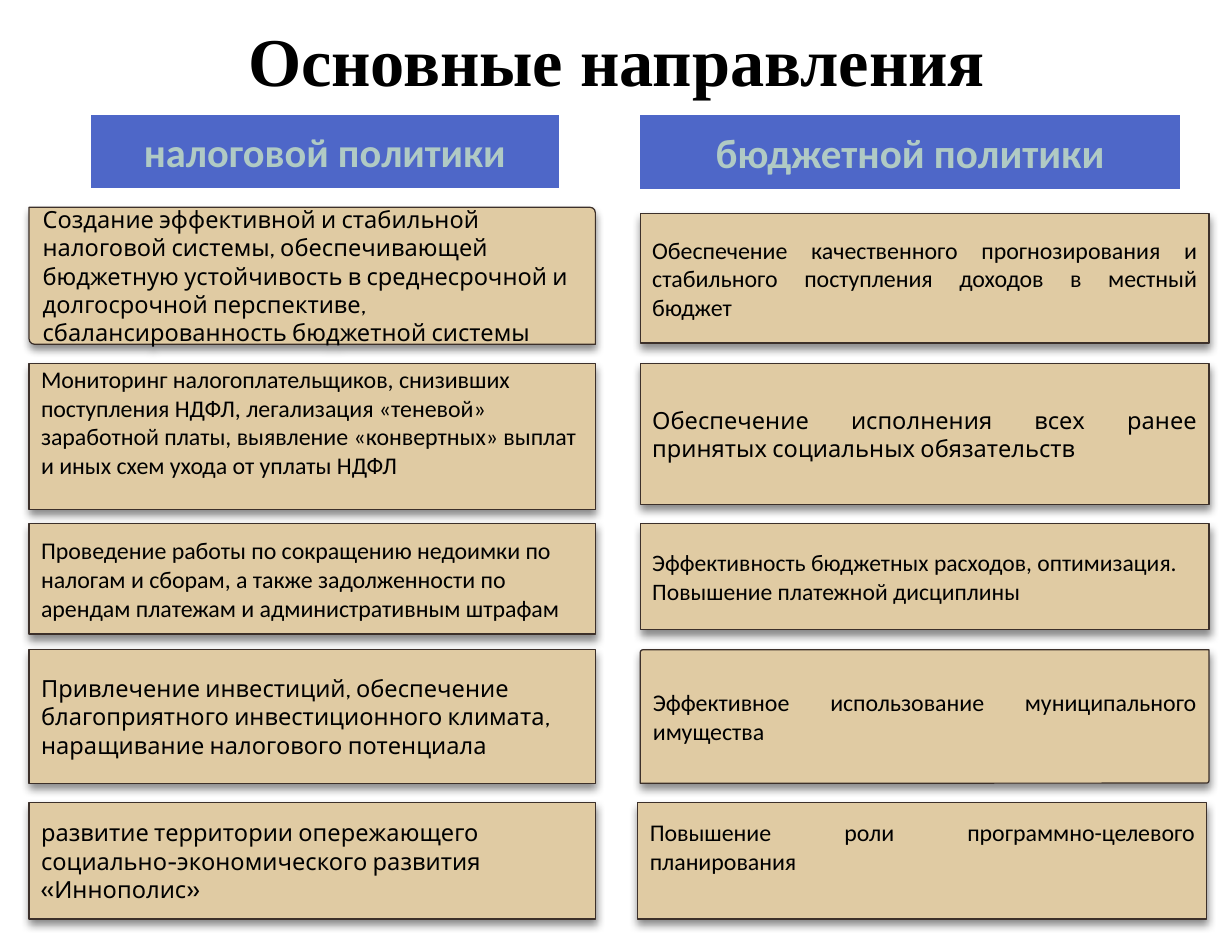
from pptx import Presentation
from pptx.dml.color import RGBColor
from pptx.enum.shapes import MSO_SHAPE as Shape
from pptx.enum.text import MSO_ANCHOR as Anchor, PP_ALIGN as Align
from pptx.oxml import parse_xml
from pptx.oxml.ns import nsdecls, qn
from pptx.util import Inches, Pt

COLORS = {"card": "E0CBA3", "edge": "3C302A", "text": "000000",
          "header": "4E67C8", "header_text": "B0CAC4"}

SHADOW = (f'<a:effectLst {nsdecls("a")}><a:outerShdw blurRad="63500" dist="38100" '
          'dir="5400000" algn="ctr" rotWithShape="0"><a:srgbClr val="000000">'
          '<a:alpha val="45000"/></a:srgbClr></a:outerShdw></a:effectLst>')

CALIBRI = {"name": "Calibri", "size": Pt(14.2)}
CALIBRI_SMALL = {"name": "Calibri", "size": Pt(14)}
CABIN = {"name": "Cabin", "size": Pt(14)}
LOW_INSET = 0.29  # lifts the text by half a line

LEFT, RIGHT = 0.24, 5.28
ROW_TOPS = (1.71, 3, 4.32, 5.36, 6.62)

# Height, font, text, then whatever differs from a plain card
TAX_CARDS = [
    (1.13, CABIN, "Создание эффективной и стабильной налоговой системы, обеспечивающей "
     "бюджетную устойчивость в среднесрочной и долгосрочной перспективе, "
     "сбалансированность бюджетной системы", {"corners": (0, 0.04)}),
    (1.2, CALIBRI, "Мониторинг налогоплательщиков, снизивших поступления НДФЛ, легализация "
     "«теневой» заработной платы, выявление «конвертных» выплат и иных схем ухода "
     "от уплаты НДФЛ", {"bottom": LOW_INSET}),
    (0.91, CALIBRI, "Проведение работы по сокращению недоимки по налогам и сборам, а также "
     "задолженности по арендам платежам и административным штрафам", {}),
    (1.1, CABIN, "Привлечение инвестиций, обеспечение благоприятного инвестиционного "
     "климата, наращивание налогового потенциала", {}),
    (0.96, CABIN, "развитие территории опережающего социально-экономического развития "
     "«Иннополис»", {}),
]
BUDGET_CARDS = [
    (1.07, CALIBRI, "Обеспечение качественного прогнозирования и стабильного поступления "
     "доходов в местный бюджет", {"top": 1.76}),
    (1.16, CABIN, "Обеспечение исполнения всех ранее принятых социальных обязательств", {}),
    (0.87, CALIBRI_SMALL, "Эффективность бюджетных расходов, оптимизация.\n"
     "Повышение платежной дисциплины", {}),
    (1.1, CALIBRI, "Эффективное использование муниципального имущества",
     {"corners": (0.019, 0)}),
    (0.96, CALIBRI, "Повышение роли программно-целевого планирования",
     {"left": 5.26, "bottom": LOW_INSET}),
]


class SlideBuilder:
    def __init__(self, page, colors):
        self.page = page
        self.colors = colors

    def color(self, name):
        return RGBColor.from_string(self.colors[name])

    def add_text(self, box, text, font, color, align, anchor=Anchor.TOP, wrap=True):
        frame = box.text_frame
        frame.word_wrap = wrap
        frame.vertical_anchor = anchor
        for index, line in enumerate(text.split("\n")):
            para = frame.add_paragraph() if index else frame.paragraphs[0]
            para.alignment = align
            span = para.add_run()
            span.text = line
            for key, value in font.items():
                setattr(span.font, key, value)
            span.font.color.rgb = self.color(color)

    def shape(self, kind, left, top, width, height, fill, corners):
        box = self.page.shapes.add_shape(
            kind, Inches(left), Inches(top), Inches(width), Inches(height))
        for index, value in enumerate(corners):
            box.adjustments[index] = value
        box.fill.solid()
        box.fill.fore_color.rgb = self.color(fill)
        box.shadow.inherit = False
        return box

    def title(self, text, left, top, width, height):
        box = self.page.shapes.add_textbox(
            Inches(left), Inches(top), Inches(width), Inches(height))
        font = {"name": "Times New Roman", "size": Pt(40.6), "bold": True}
        self.add_text(box, text, font, "text", Align.CENTER, wrap=False)

    def header(self, text, left, width, height, size):
        box = self.shape(Shape.PARALLELOGRAM, left, 0.95, width, height, "header", (0,))
        box.line.fill.background()
        font = {"name": "Calibri", "size": Pt(size), "bold": True}
        self.add_text(box, text, font, "header_text", Align.CENTER)

    def card(self, text, left, top, width, height, font, align,
             corners=(0, 0), bottom=0.05):
        box = self.shape(Shape.ROUND_2_DIAG_RECTANGLE, left, top, width, height,
                         "card", corners)
        box.line.color.rgb = self.color("edge")
        box.line.width = Pt(0.75)
        properties = box.element.spPr
        properties.replace(properties.find(qn("a:effectLst")), parse_xml(SHADOW))
        box.text_frame.margin_bottom = Inches(bottom)
        self.add_text(box, text, font, "text", align, Anchor.MIDDLE)

    def column(self, cards, left, width, align):
        for row_top, (height, font, text, changes) in zip(ROW_TOPS, cards):
            place = {"left": left, "top": row_top, **changes}
            self.card(text, width=width, height=height, font=font, align=align, **place)


def main():
    deck = Presentation()
    deck.slide_width, deck.slide_height = Inches(10.16), Inches(7.72)
    builder = SlideBuilder(deck.slides.add_slide(deck.slide_layouts[6]), COLORS)

    # Title
    builder.title("Основные направления", 1.91, 0.1, 6.35, 0.78)

    # Cards of both columns
    builder.column(BUDGET_CARDS, RIGHT, 4.69, Align.JUSTIFY)
    builder.column(TAX_CARDS, LEFT, 4.67, Align.LEFT)

    # Column headers
    builder.header("налоговой политики", 0.75, 3.86, 0.6, 24)
    builder.header("бюджетной политики", RIGHT, 4.45, 0.61, 24.4)

    deck.save("out.pptx")


if __name__ == "__main__":
    main()
